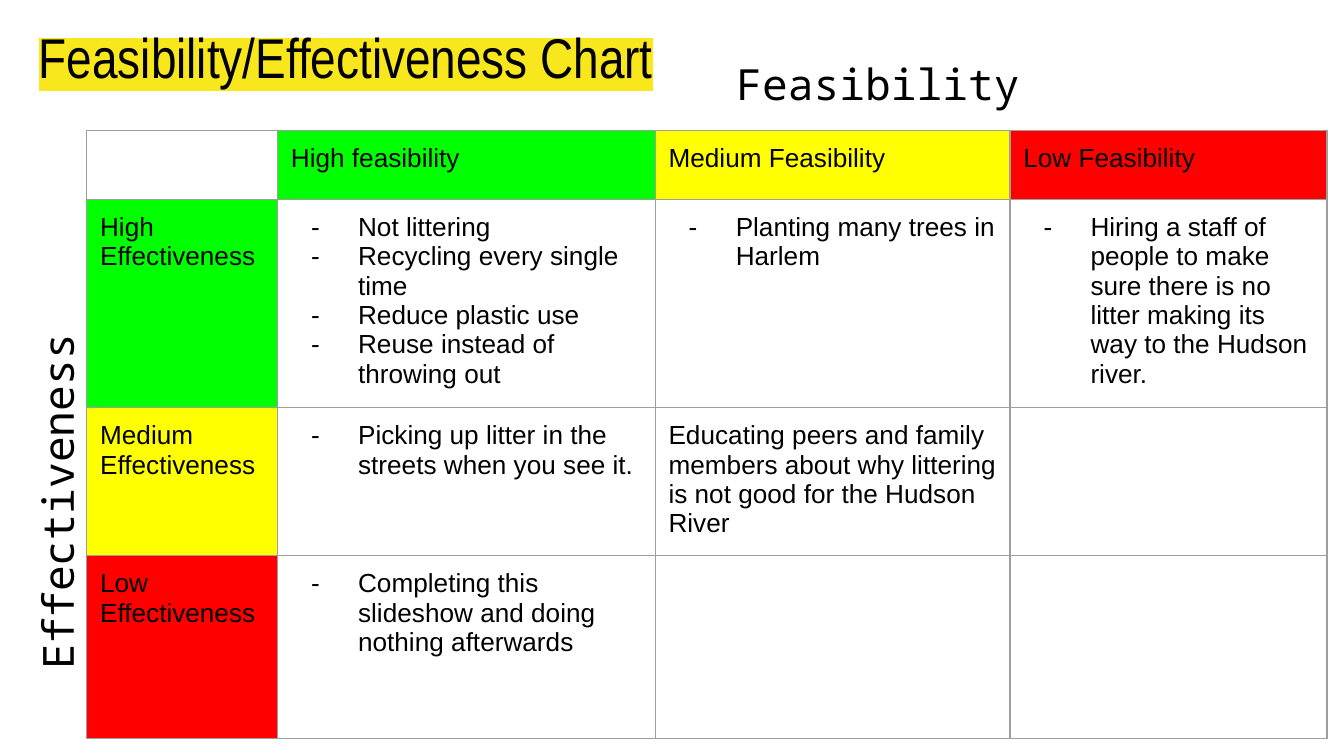
from dataclasses import dataclass
from lxml.etree import SubElement
from pptx import Presentation
from pptx.dml.color import RGBColor
from pptx.enum.text import MSO_ANCHOR, MSO_AUTO_SIZE, PP_ALIGN
from pptx.oxml import parse_xml
from pptx.oxml.ns import nsdecls, qn
from pptx.util import Inches, Pt


@dataclass(frozen=True)
class Theme:
    """Colours, fonts and type sizes of the slide."""
    ink: str = "000000"
    mark: str = "F8E71C"
    rule: str = "9E9E9E"
    high: str = "00FF00"
    mid: str = "FFFF00"
    low: str = "FF0000"
    head: str = "Arial Narrow"
    body: str = "Arial"
    mono: str = "Noto Sans Mono"
    big: int = 30
    axis: int = 23
    small: int = 14


LOOK = Theme()
WIDE = 10
TALL = WIDE * 9 / 16
PAD = Inches(0.1)
COLS = [1.42, 2.81, 2.64, 2.36]
ROWS = [0.51, 1.55, 1.1, 1.36]
LEVELS = [LOOK.high, LOOK.mid, LOOK.low]
HEADS = ["High feasibility", "Medium Feasibility", "Low Feasibility"]
SIDES = ["High Effectiveness", "Medium Effectiveness", "Low Effectiveness"]
IDEAS = {
    (1, 1): ["Not littering", "Recycling every single time",
             "Reduce plastic use", "Reuse instead of throwing out"],
    (1, 2): ["Planting many trees in Harlem"],
    (1, 3): ["Hiring a staff of people to make sure there is no litter "
             "making its way to the Hudson river."],
    (2, 1): ["Picking up litter in the streets when you see it."],
    (3, 1): ["Completing this slideshow and doing nothing afterwards"],
}
PLAIN = ("Educating peers and family members about why littering "
         "is not good for the Hudson River")


def dash(para):
    """Give a paragraph a hanging dash bullet."""
    props = para._p.get_or_add_pPr()
    props.set("marL", str(Inches(0.5)))
    props.set("indent", str(-Inches(0.35)))
    tint = SubElement(props, qn("a:buClr"))
    SubElement(tint, qn("a:srgbClr"), val=LOOK.ink)
    SubElement(props, qn("a:buFont"), typeface=LOOK.body)
    SubElement(props, qn("a:buChar"), char="-")


def write(frame, lines, font=LOOK.body, size=LOOK.small, align=PP_ALIGN.LEFT,
          mark=None, dashed=False):
    """Write lines into a text frame in one format."""
    for num, line in enumerate(lines):
        para = frame.add_paragraph() if num else frame.paragraphs[0]
        para.alignment = align
        if dashed:
            dash(para)
        run = para.add_run()
        run.text = line
        run.font.name, run.font.size = font, Pt(size)
        run.font.color.rgb = RGBColor.from_string(LOOK.ink)
        if mark:
            fill = run._r.rPr.find(qn("a:solidFill"))
            fill.addnext(parse_xml(
                f'<a:highlight {nsdecls("a")}><a:srgbClr val="{mark}"/></a:highlight>'))


def place(item, left, top, width, height):
    """Place an item by shares of the slide's size."""
    item.left, item.width = Inches(left * WIDE), Inches(width * WIDE)
    item.top, item.height = Inches(top * TALL), Inches(height * TALL)


def setup(frame):
    """Set wrapping, insets and anchor of a text frame."""
    frame.word_wrap = True
    frame.auto_size = MSO_AUTO_SIZE.NONE
    frame.vertical_anchor = MSO_ANCHOR.TOP
    frame.margin_left = frame.margin_right = PAD
    frame.margin_top = frame.margin_bottom = PAD


def title(slide, text):
    """Fill the title placeholder with highlighted text."""
    item = slide.shapes.title
    place(item, 0.019, 0.0125, 0.932, 0.1425)
    setup(item.text_frame)
    write(item.text_frame, [text], font=LOOK.head, size=LOOK.big, mark=LOOK.mark)


def label(slide, text, area, turn=0, align=PP_ALIGN.LEFT):
    """Add an axis label."""
    item = slide.shapes.add_textbox(0, 0, 0, 0)
    place(item, *area)
    item.rotation = turn
    setup(item.text_frame)
    write(item.text_frame, [text], font=LOOK.mono, size=LOOK.axis, align=align)


def dress(cell, fill):
    """Set a cell's insets, borders and fill."""
    cell.margin_left = cell.margin_right = PAD
    cell.margin_top = cell.margin_bottom = PAD
    props = cell._tc.get_or_add_tcPr()
    for side in ("lnL", "lnR", "lnT", "lnB"):
        line = SubElement(props, qn(f"a:{side}"), w=str(Pt(0.75)))
        paint = SubElement(line, qn("a:solidFill"))
        SubElement(paint, qn("a:srgbClr"), val=LOOK.rule)
    if fill:
        cell.fill.solid()
        cell.fill.fore_color.rgb = RGBColor.from_string(fill)
    else:
        cell.fill.background()


def matrix(slide):
    """Add the table of ideas with its coloured headings."""
    frame = slide.shapes.add_table(len(ROWS), len(COLS), 0, 0, 0, 0)
    place(frame, 0.0645, 0.173, sum(COLS) / WIDE, sum(ROWS) / TALL)
    table = frame.table
    table.first_row = table.horz_banding = False
    for col, width in zip(table.columns, COLS):
        col.width = Inches(width)
    for row, height in zip(table.rows, ROWS):
        row.height = Inches(height)
    fills = {}
    for num, tint in enumerate(LEVELS, 1):
        fills[0, num] = fills[num, 0] = tint
        write(table.cell(0, num).text_frame, [HEADS[num - 1]])
        write(table.cell(num, 0).text_frame, [SIDES[num - 1]])
    for spot, lines in IDEAS.items():
        write(table.cell(*spot).text_frame, lines, dashed=True)
    write(table.cell(2, 2).text_frame, [PLAIN])
    for row in range(len(ROWS)):
        for col in range(len(COLS)):
            dress(table.cell(row, col), fills.get((row, col)))


def main():
    """Build and save the slide."""
    deck = Presentation()
    deck.slide_width, deck.slide_height = Inches(WIDE), Inches(TALL)
    slide = deck.slides.add_slide(deck.slide_layouts[5])
    title(slide, "Feasibility/Effectiveness Chart")
    matrix(slide)
    label(slide, "Feasibility", (0.347, 0.059, 0.613, 0.114), align=PP_ALIGN.CENTER)
    label(slide, "Effectiveness", (-0.142, 0.542, 0.358, 0.085), turn=270)
    deck.save("out.pptx")


if __name__ == "__main__":
    main()
